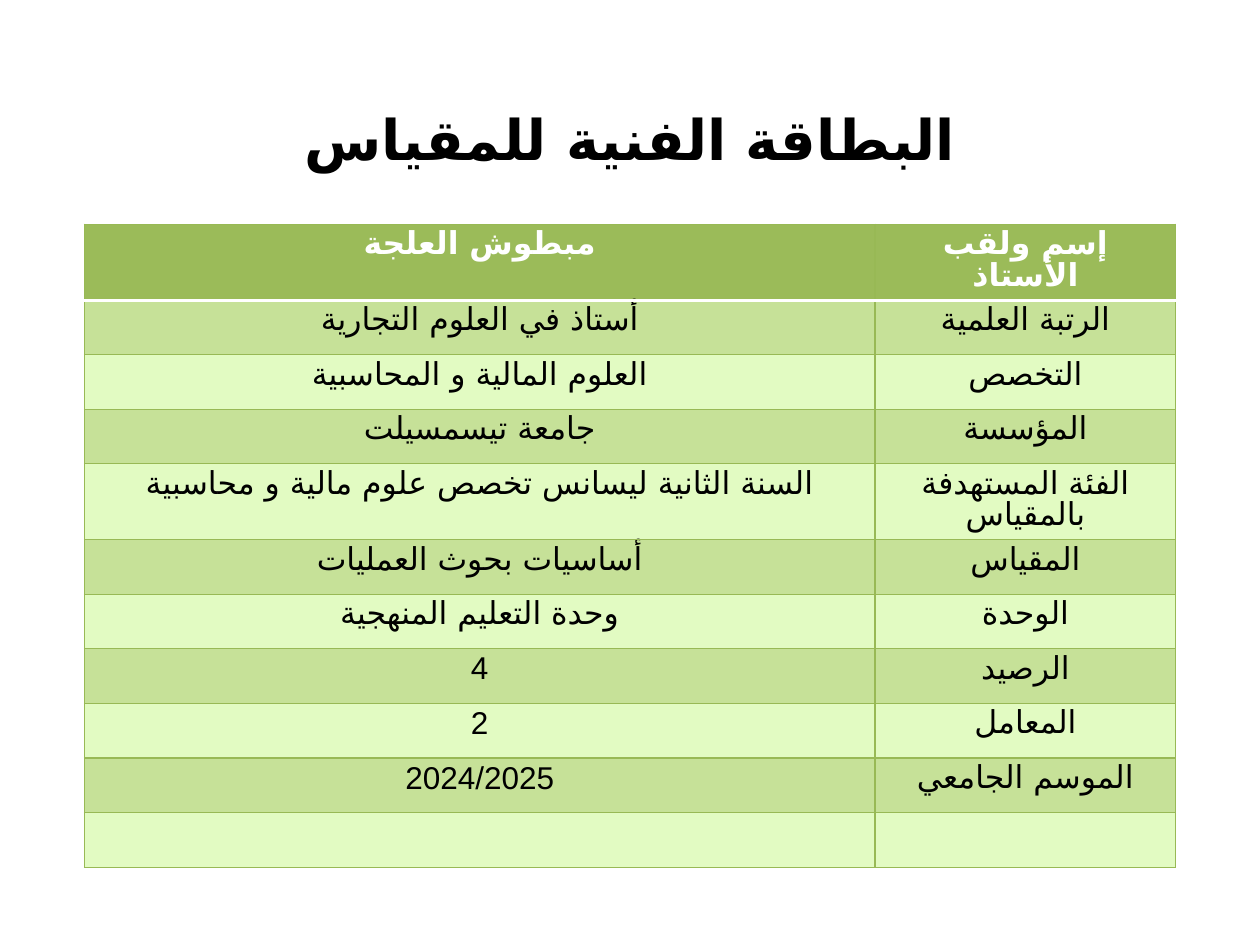
from lxml.etree import SubElement
from pptx import Presentation
from pptx.dml.color import RGBColor
from pptx.enum.text import MSO_ANCHOR, PP_ALIGN
from pptx.oxml import parse_xml
from pptx.oxml.ns import nsdecls, qn
from pptx.util import Cm, Pt

BLACK = RGBColor(0x00, 0x00, 0x00)
WHITE = RGBColor(0xFF, 0xFF, 0xFF)
GREEN = RGBColor(0x9B, 0xBB, 0x59)
EDGE = RGBColor(0x98, 0xB9, 0x55)
DARK = RGBColor(0xC6, 0xE1, 0x98)
LIGHT = RGBColor(0xE2, 0xFB, 0xC2)

ROWS = [
    ("مبطوش العلجة", "إسم ولقب الأستاذ"),
    ("أستاذ في العلوم التجارية", "الرتبة العلمية"),
    ("العلوم المالية و المحاسبية", "التخصص"),
    ("جامعة تيسمسيلت", "المؤسسة"),
    ("السنة الثانية ليسانس تخصص علوم مالية و محاسبية", "الفئة المستهدفة بالمقياس"),
    ("أساسيات بحوث العمليات", "المقياس"),
    ("وحدة التعليم المنهجية", "الوحدة"),
    ("4", "الرصيد"),
    ("2", "المعامل"),
    ("2024/2025", "الموسم الجامعي"),
    ("", ""),
]


def write(frame, text, size, color, bold):
    """Fill the frame with one centred right-to-left run."""
    para = frame.paragraphs[0]
    para.alignment = PP_ALIGN.CENTER
    para._p.get_or_add_pPr().set("rtl", "1")
    if text:
        run = para.add_run()
        run.text = text
        font = run.font
        font.name, font.size, font.bold = "Calibri", Pt(size), bold
        font.color.rgb = color
        face = "Arial" if text[0].isdigit() else "DejaVu Sans"
        SubElement(run._r.rPr, qn("a:cs")).set("typeface", face)
    return para


def rule(cell, edges):
    """Draw the cell borders, given as (side, colour, points)."""
    for i, (side, color, width) in enumerate(edges):
        line = parse_xml(
            f'<a:ln{side} {nsdecls("a")} w="{Pt(width)}"><a:solidFill>'
            f'<a:srgbClr val="{color}"/></a:solidFill></a:ln{side}>')
        cell._tc.get_or_add_tcPr().insert(i, line)


prs = Presentation()
prs.slide_width, prs.slide_height = Cm(25.4), Cm(19.05)
slide = prs.slides.add_slide(prs.slide_layouts[5])

# Title
title = slide.shapes.title
title.left, title.top = Cm(0.3), Cm(0.33)
title.width, title.height = Cm(24.8), Cm(18.4)
frame = title.text_frame
frame.vertical_anchor = MSO_ANCHOR.TOP
frame.margin_top = Cm(1.78)
write(frame, "البطاقة الفنية للمقياس", 32, BLACK, True)

# Course card: the first and fifth rows hold two lines
table = slide.shapes.add_table(
    len(ROWS), 2, Cm(1.7), Cm(4.52), Cm(22), Cm(12.2)).table
table.columns[0].width = Cm(15.94)
table.columns[1].width = Cm(6.06)

for r, row in enumerate(ROWS):
    table.rows[r].height = Cm(1.53) if r in (0, 4) else Cm(1.1)
    head = r == 0
    fill = GREEN if head else DARK if r % 2 else LIGHT
    top = (WHITE, 2) if r == 1 else (EDGE, 0.75)
    base = (WHITE, 2) if head else (EDGE, 0.75)
    for c, text in enumerate(row):
        cell = table.cell(r, c)
        cell.fill.solid()
        cell.fill.fore_color.rgb = fill
        rule(cell, [("L", EDGE, 0.75), ("R", EDGE, 0.75),
                    ("T", *top), ("B", *base)])
        para = write(cell.text_frame, text, 18, WHITE if head else BLACK, head)
        para.line_spacing = Pt(18)

prs.save("out.pptx")
